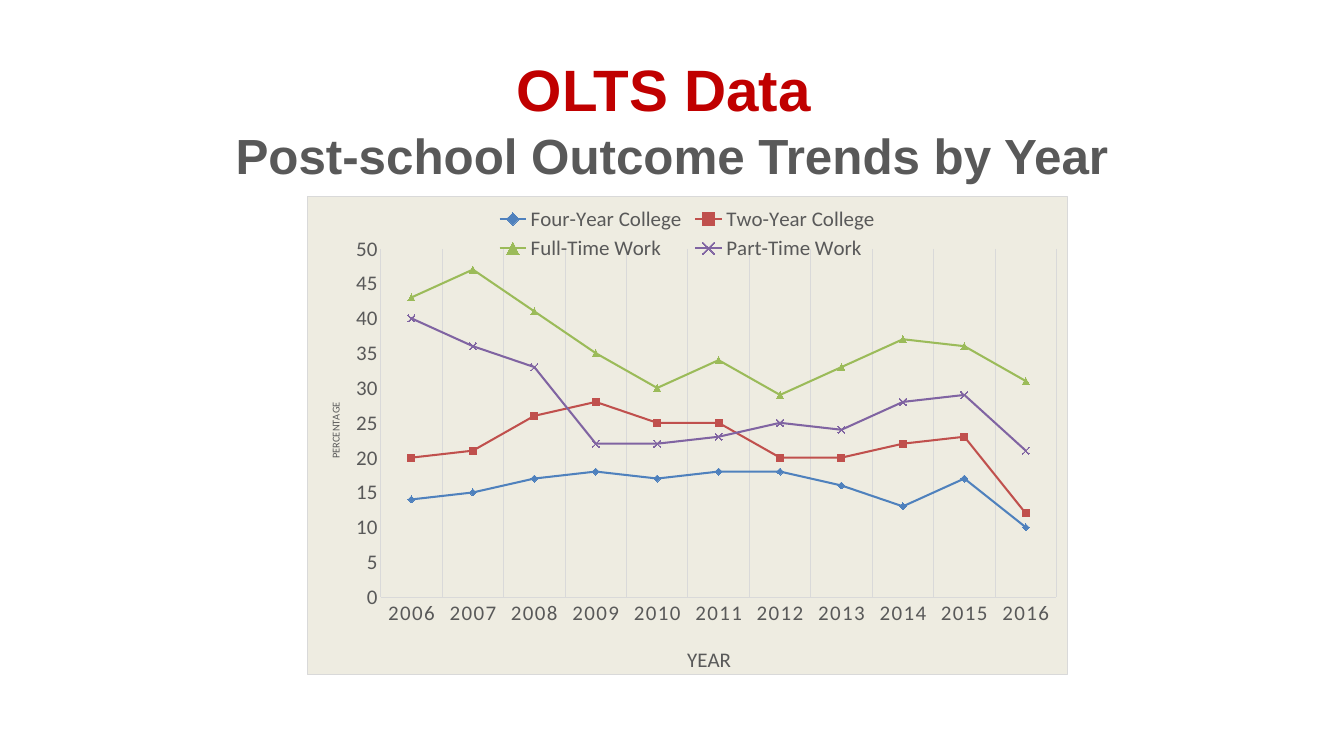
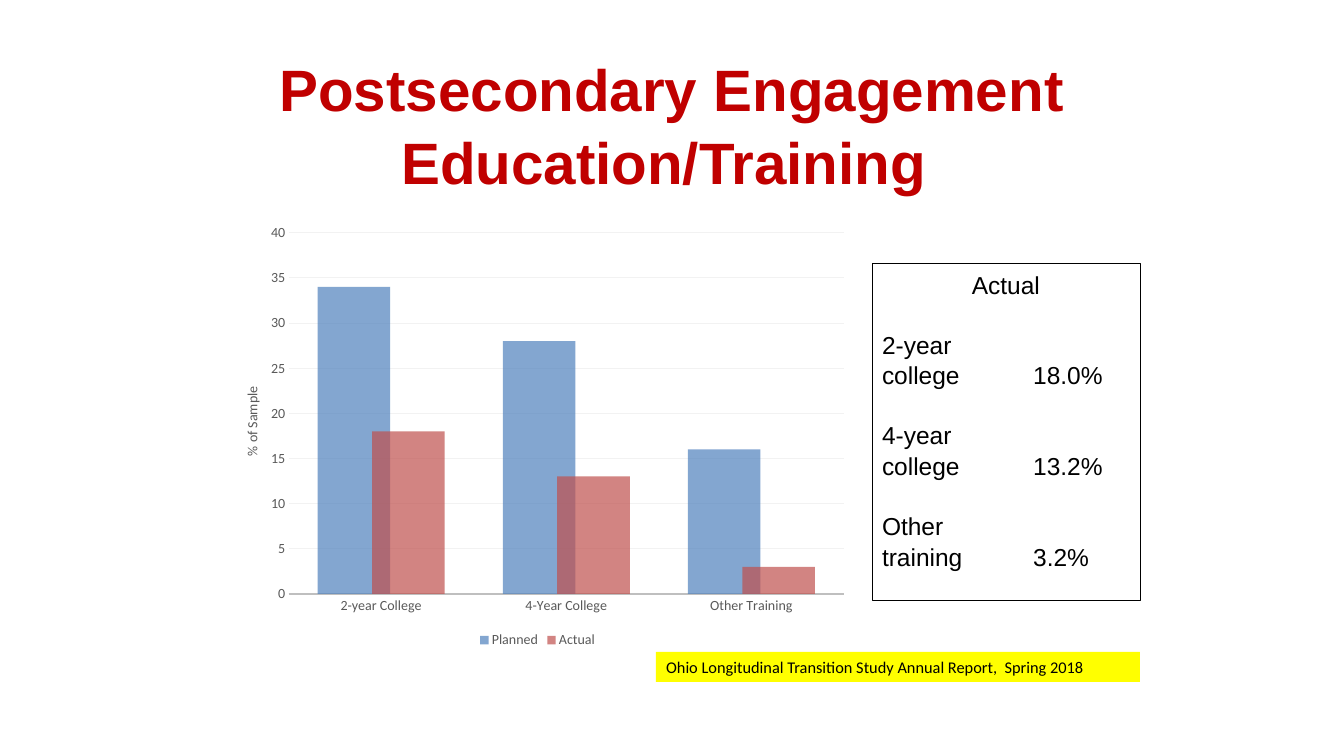
from lxml.etree import SubElement
from pptx import Presentation
from pptx.chart.data import CategoryChartData
from pptx.dml.color import RGBColor
from pptx.enum.chart import XL_CHART_TYPE, XL_LEGEND_POSITION, XL_MARKER_STYLE, XL_TICK_MARK
from pptx.enum.shapes import MSO_SHAPE
from pptx.enum.text import MSO_ANCHOR, MSO_AUTO_SIZE, PP_ALIGN
from pptx.oxml import parse_xml
from pptx.oxml.ns import nsdecls, qn
from pptx.util import Inches, Pt

RED, GRAY, BLACK, YELLOW = "C00000", "595959", "000000", "FFFF00"
BEIGE, RULE, AXIS, PALE_RULE = "EEECE1", "D9D9D9", "BFBFBF", "F2F2F2"
BLUE, BRICK, GREEN, PURPLE = "4F81BD", "C0504D", "9BBB59", "8064A2"
HEADING_FONT, BODY_FONT = "Arial", "Calibri"


def rgb(value):
    return RGBColor.from_string(value)


def set_font(font, size, color, name=BODY_FONT, bold=False):
    font.size, font.name, font.bold = Pt(size), name, bold
    font.color.rgb = rgb(color)


def set_line(line, color, width):
    """Draw the line in a colour, or hide it when there is none."""
    if color:
        line.color.rgb = rgb(color)
        line.width = Pt(width)
    else:
        line.fill.background()


def set_layout(parent, after, x, y, w=None, h=None):
    """Place a chart part by fractions of the chart area, after the named child."""
    for old in parent.findall(qn("c:layout")):
        parent.remove(old)
    values = {"xMode": "edge", "yMode": "edge", "x": x, "y": y}
    if w:
        values = {"layoutTarget": "inner", **values, "w": w, "h": h}
    tags = "".join(f'<c:{tag} val="{val}"/>' for tag, val in values.items())
    layout = parse_xml(f'<c:layout {nsdecls("c")}><c:manualLayout>{tags}'
                       '</c:manualLayout></c:layout>')
    if after:
        parent.find(qn(after)).addnext(layout)
    else:
        parent.insert(0, layout)


class Deck:
    def __init__(self):
        self.prs = Presentation()
        self.prs.slide_width, self.prs.slide_height = Inches(16), Inches(9)
        self.slide = None

    def new_slide(self):
        self.slide = self.prs.slides.add_slide(self.prs.slide_layouts[5])

    def title(self, box, heading, subheading=None):
        sp = self.slide.shapes.title
        sp.left, sp.top, sp.width, sp.height = map(Inches, box)
        tf = sp.text_frame
        tf.margin_left = tf.margin_top = tf.margin_right = tf.margin_bottom = 0
        tf.auto_size, tf.vertical_anchor = MSO_AUTO_SIZE.NONE, MSO_ANCHOR.TOP
        p = tf.paragraphs[0]
        p.alignment, p.line_spacing = PP_ALIGN.CENTER, 1.04
        set_font(p.font, 50, RED, HEADING_FONT, True)
        p.add_run().text = heading
        if subheading:
            p.add_line_break()
            r = p.add_run()
            r.text = subheading
            r.font.size = Pt(42.3)
            r.font.color.rgb = rgb(GRAY)

    def box(self, box, fill=None, line=None):
        """Add a rectangle and return its text frame."""
        sp = self.slide.shapes.add_shape(MSO_SHAPE.RECTANGLE, *map(Inches, box))
        sp.shadow.inherit = False
        if fill:
            sp.fill.solid()
            sp.fill.fore_color.rgb = rgb(fill)
        else:
            sp.fill.background()
        set_line(sp.line, line, 0.5)
        tf = sp.text_frame
        tf.word_wrap, tf.vertical_anchor = True, MSO_ANCHOR.TOP
        tf.margin_left = tf.margin_right = Inches(0.12)
        tf.margin_top = tf.margin_bottom = Inches(0.06)
        return tf

    def note(self, box, text):
        p = self.box(box, fill=YELLOW).paragraphs[0]
        p.text, p.alignment = text, PP_ALIGN.LEFT
        set_font(p.font, 14, BLACK)

    def figures(self, box, heading, rows):
        """Add a framed list with its figures lined up at a tab stop."""
        tf = self.box(box, line=BLACK)
        for i, text in enumerate([heading, *rows]):
            p = tf.add_paragraph() if i else tf.paragraphs[0]
            p.text, p.line_spacing = text, 1.04
            p.alignment = PP_ALIGN.LEFT if i else PP_ALIGN.CENTER
            if i:
                p.space_before = Pt(25.2)
                tabs = SubElement(p._p.get_or_add_pPr(), qn("a:tabLst"))
                SubElement(tabs, qn("a:tab"), pos=str(Inches(1.8)), algn="l")
            set_font(p.font, 21, BLACK, HEADING_FONT)

    def chart(self, kind, box, categories, series, size, top, legend, plot):
        data = CategoryChartData()
        data.categories = categories
        for name, values in series:
            data.add_series(name, values)
        chart = self.slide.shapes.add_chart(kind, *map(Inches, box), data).chart
        set_font(chart.font, 10, BLACK)
        chart.has_title = False
        chart.has_legend = True
        chart.legend.position = legend
        chart.legend.include_in_layout = False
        set_font(chart.legend.font, size, GRAY)
        for axis in (chart.category_axis, chart.value_axis):
            axis.major_tick_mark = axis.minor_tick_mark = XL_TICK_MARK.NONE
            set_font(axis.tick_labels.font, size, GRAY)
        axis = chart.value_axis
        axis.minimum_scale, axis.maximum_scale, axis.major_unit = 0, top, 5
        axis.has_major_gridlines = False
        chart.plots[0].vary_by_categories = False
        set_layout(chart._chartSpace.chart.plotArea, None, *plot)
        return chart

    def axis_title(self, axis, text, size, x, y):
        title = axis.axis_title
        p = title.text_frame.paragraphs[0]
        p.text = text
        set_font(p.font, size, GRAY)
        set_layout(title._element, "c:tx", x, y)

    def gridlines(self, axis, color):
        axis.has_major_gridlines = True
        set_line(axis.major_gridlines.format.line, color, 0.75)

    def trend_chart(self, box, categories, series):
        chart = self.chart(XL_CHART_TYPE.LINE_MARKERS, box, categories,
                           [row[:2] for row in series], 18, 50,
                           XL_LEGEND_POSITION.TOP, (0.097, 0.11, 0.889, 0.728))
        years, percent = chart.category_axis, chart.value_axis
        for axis in (years, percent):
            set_line(axis.format.line, RULE, 0.75)
        self.gridlines(years, RULE)
        years._element.xpath("c:txPr//a:defRPr")[0].set("spc", "120")
        self.axis_title(years, "YEAR", 18, 0.495, 0.93)
        self.axis_title(percent, "PERCENTAGE", 9, 0.026, 0.428)
        for ser, (_, _, color, style) in zip(chart.plots[0].series, series):
            ser.smooth = False
            set_line(ser.format.line, color, 1.75)
            marker = ser.marker
            marker.style, marker.size = style, 6
            set_line(marker.format.line, color, 0.75)
            if style == XL_MARKER_STYLE.X:
                marker.format.fill.background()
            else:
                marker.format.fill.solid()
                marker.format.fill.fore_color.rgb = rgb(color)
        chart._chartSpace.chart.addnext(parse_xml(
            f'<c:spPr {nsdecls("c", "a")}>'
            f'<a:solidFill><a:srgbClr val="{BEIGE}"/></a:solidFill>'
            f'<a:ln w="{Pt(0.75)}"><a:solidFill><a:srgbClr val="{RULE}"/></a:solidFill></a:ln>'
            '</c:spPr>'))

    def column_chart(self, box, categories, series):
        chart = self.chart(XL_CHART_TYPE.COLUMN_CLUSTERED, box, categories,
                           [row[:2] for row in series], 12, 40,
                           XL_LEGEND_POSITION.BOTTOM, (0.11, 0.037, 0.87, 0.83))
        set_line(chart.category_axis.format.line, AXIS, 1.25)
        set_line(chart.value_axis.format.line, None, 0)
        self.gridlines(chart.value_axis, PALE_RULE)
        self.axis_title(chart.value_axis, "% of Sample", 12, 0.034, 0.384)
        plot = chart.plots[0]
        plot.gap_width, plot.overlap = 80, 25
        for ser, (_, _, color) in zip(plot.series, series):
            ser.invert_if_negative = False
            ser.format.fill.solid()
            ser.format.fill.fore_color.rgb = rgb(color)
            clr = ser._element.xpath("c:spPr/a:solidFill/a:srgbClr")[0]
            SubElement(clr, qn("a:alpha"), val="70000")


def main():
    deck = Deck()

    deck.new_slide()
    deck.title((0.8, 0.6, 14.4, 0.84), "OLTS Data ", "Post-school Outcome Trends by Year")
    deck.trend_chart((3.65, 2.33, 9.06, 5.75), [str(y) for y in range(2006, 2017)], [
        ("Four-Year College", (14, 15, 17, 18, 17, 18, 18, 16, 13, 17, 10),
         BLUE, XL_MARKER_STYLE.DIAMOND),
        ("Two-Year College", (20, 21, 26, 28, 25, 25, 20, 20, 22, 23, 12),
         BRICK, XL_MARKER_STYLE.SQUARE),
        ("Full-Time Work", (43, 47, 41, 35, 30, 34, 29, 33, 37, 36, 31),
         GREEN, XL_MARKER_STYLE.TRIANGLE),
        ("Part-Time Work", (40, 36, 33, 22, 22, 23, 25, 24, 28, 29, 21),
         PURPLE, XL_MARKER_STYLE.X),
    ])

    deck.new_slide()
    deck.title((2.6, 0.6, 10.8, 1.55), "Postsecondary Engagement Education/Training ")
    deck.note((7.81, 7.76, 5.76, 0.36),
              "Ohio Longitudinal Transition Study Annual Report,  Spring 2018")
    deck.figures((10.38, 3.14, 3.19, 4.01), "Actual", [
        "2-year\vcollege\t18.0%",
        "4-year\vcollege\t13.2%",
        "Other\vtraining\t3.2%",
    ])
    deck.column_chart((2.6, 2.58, 7.6, 5.18),
                      ["2-year College", "4-Year College", "Other Training"],
                      [("Planned", (34, 28, 16), BLUE), ("Actual", (18, 13, 3), BRICK)])

    deck.prs.save("out.pptx")


if __name__ == "__main__":
    main()
